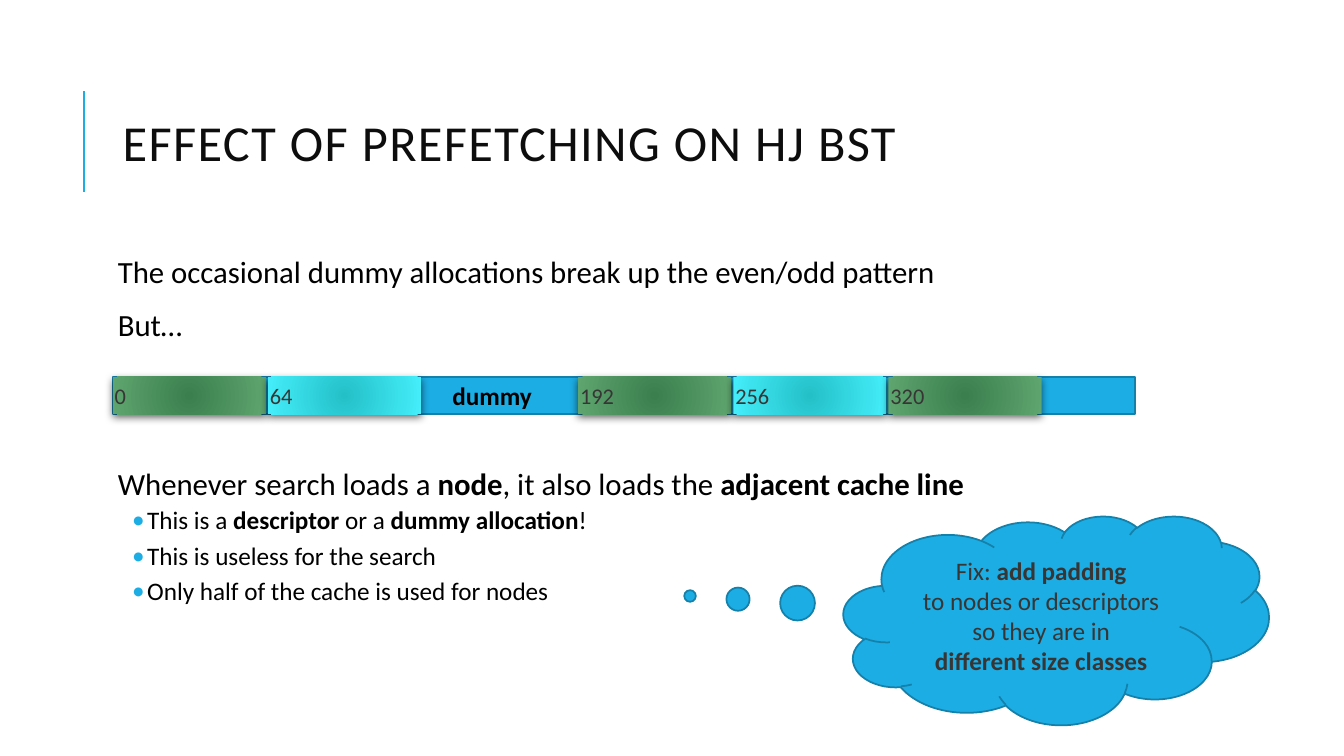
from pptx import Presentation
from pptx.dml.color import RGBColor
from pptx.enum.shapes import MSO_CONNECTOR, MSO_SHAPE
from pptx.enum.text import MSO_ANCHOR, PP_ALIGN
from pptx.oxml import parse_xml
from pptx.oxml.ns import nsdecls, qn
from pptx.util import Cm, Pt

COLORS = {
    "background": "FFFFFF", "title": "0D0D0D", "body": "000000",
    "label": "383635", "accent": "1CADE4", "outline": "1580A9",
    "shadow": "000000",
}
NODE, DESCRIPTOR = ("3A7F4D", "5FA56F"), ("24C0C8", "44EEFA")

TITLE = [("EFFECT OF PREFETCHING ON HJ BST", False)]
POINTS = [
    (0, 12, [("The occasional dummy allocations break up the even/odd pattern", False)]),
    (0, 12, [("But…", False)]),
    (0, 87.7, [("Whenever search loads a ", False), ("node", True),
               (", it also loads the ", False), ("adjacent cache line", True)]),
    (1, 2, [("This is a ", False), ("descriptor ", True), ("or a ", False),
            ("dummy allocation", True), ("!", False)]),
    (1, 2, [("This is useless for the search", False)]),
    (1, 2, [("Only half of the cache is used for nodes", False)]),
]
LEVELS = [
    {"size": 22, "after": 2, "margin": 0.25, "hang": 0.25, "bullet": False},
    {"size": 18, "after": 4, "margin": 0.74, "hang": 0.38, "bullet": True},
]
ALLOCATIONS = [(0, NODE), (64, DESCRIPTOR), (192, NODE), (256, DESCRIPTOR), (320, NODE)]
DUMMY = [("dummy", True)]
FIX = [
    [("Fix: ", False), ("add padding", True)],
    [("to nodes or descriptors", False)],
    [("so they are in", False), ("\n", False), ("different size classes", True)],
]

LEFT, CONTENT_WIDTH = 2.84, 27
MEMORY_TOP, MEMORY_HEIGHT, MEMORY_WIDTH = 9.5, 0.94, 25.76
LINE_BYTES, LINE_PITCH, LINE_WIDTH = 64, 3.91, 3.86


def rgb(name):
    return RGBColor.from_string(COLORS[name])


def add_runs(paragraph, pieces, size, color):
    for text, bold in pieces:
        if text == "\n":
            paragraph.add_line_break()
            continue
        run = paragraph.add_run()
        run.text = text
        run.font.name, run.font.size, run.font.bold = "Calibri", Pt(size), bold
        run.font.color.rgb = rgb(color)


def add_text(slide, left, top, width, height):
    frame = slide.shapes.add_textbox(Cm(left), Cm(top), Cm(width), Cm(height)).text_frame
    frame.word_wrap = True
    return frame


def add_filled(slide, kind, left, top, width, height):
    shape = slide.shapes.add_shape(kind, Cm(left), Cm(top), Cm(width), Cm(height))
    shape.shadow.inherit = False
    shape.fill.solid()
    shape.fill.fore_color.rgb = rgb("accent")
    shape.line.color.rgb = rgb("outline")
    shape.line.width = Pt(1.25)
    return shape


def add_title(slide):
    rule = slide.shapes.add_connector(
        MSO_CONNECTOR.STRAIGHT, Cm(2.11), Cm(4.83), Cm(2.11), Cm(2.29))
    rule.line.color.rgb = rgb("accent")
    rule.line.width = Pt(1.5)
    rule._element.spPr.append(parse_xml(f"<a:effectLst {nsdecls('a')}/>"))
    frame = add_text(slide, LEFT, 1.63, CONTENT_WIDTH, 4.17)
    frame.vertical_anchor = MSO_ANCHOR.MIDDLE
    heading = frame.paragraphs[0]
    heading.line_spacing = 0.8
    add_runs(heading, TITLE, 36, "title")
    heading.runs[0].font._element.set("spc", "100")


def add_points(slide):
    frame = add_text(slide, LEFT, 6.35, CONTENT_WIDTH, 11.18)
    frame.margin_left = frame.margin_right = Cm(0.13)
    frame.margin_top = frame.margin_bottom = Cm(0.13)
    for index, (depth, before, pieces) in enumerate(POINTS):
        point = frame.add_paragraph() if index else frame.paragraphs[0]
        level = LEVELS[depth]
        point.level = depth
        point.line_spacing = 0.9
        point.space_before, point.space_after = Pt(before), Pt(level["after"])
        properties = point._p.get_or_add_pPr()
        properties.set("marL", str(Cm(level["margin"])))
        properties.set("indent", str(-Cm(level["hang"])))
        if level["bullet"]:
            properties.append(parse_xml(
                f'<a:buClr {nsdecls("a")}><a:srgbClr val="{COLORS["accent"]}"/></a:buClr>'))
            properties.append(parse_xml(f'<a:buFont {nsdecls("a")} typeface="Calibri"/>'))
            properties.append(parse_xml(f'<a:buChar {nsdecls("a")} char="•"/>'))
        else:
            properties.append(parse_xml(f"<a:buNone {nsdecls('a')}/>"))
        add_runs(point, pieces, level["size"], "body")


def add_allocation(slide, address, gradient):
    left = LEFT + address / LINE_BYTES * LINE_PITCH
    block = add_filled(slide, MSO_SHAPE.RECTANGLE, left, MEMORY_TOP, LINE_WIDTH, MEMORY_HEIGHT)
    block.fill.background()
    block.line.fill.background()
    center, edge = gradient
    properties = block._element.spPr
    properties.replace(properties.find(qn("a:noFill")), parse_xml(
        f'<a:gradFill {nsdecls("a")} rotWithShape="1"><a:gsLst>'
        f'<a:gs pos="0"><a:srgbClr val="{center}"/></a:gs>'
        f'<a:gs pos="100000"><a:srgbClr val="{edge}"/></a:gs></a:gsLst>'
        '<a:path path="circle"><a:fillToRect l="100000" t="100000" r="100000" b="100000"/>'
        '</a:path></a:gradFill>'))
    properties.find(qn("a:effectLst")).append(parse_xml(
        f'<a:outerShdw {nsdecls("a")} blurRad="{Pt(6)}" dist="{Pt(2)}" dir="5400000" '
        f'rotWithShape="0"><a:srgbClr val="{COLORS["shadow"]}"><a:alpha val="60000"/>'
        '</a:srgbClr></a:outerShdw>'))
    frame = block.text_frame
    frame.margin_left = Cm(0.05)
    frame.vertical_anchor = MSO_ANCHOR.MIDDLE
    frame.paragraphs[0].alignment = PP_ALIGN.LEFT
    add_runs(frame.paragraphs[0], [(str(address), False)], 16, "label")


def add_memory(slide):
    add_filled(slide, MSO_SHAPE.RECTANGLE, LEFT, MEMORY_TOP, MEMORY_WIDTH, MEMORY_HEIGHT)
    for address, gradient in ALLOCATIONS:
        add_allocation(slide, address, gradient)
    frame = add_text(slide, 11.15, 9.45, 2.84, 1.02)
    add_runs(frame.paragraphs[0], DUMMY, 18, "body")


def add_fix(slide):
    cloud = add_filled(slide, MSO_SHAPE.CLOUD_CALLOUT, 21.26, 13, 10.72, 5.26)
    cloud.adjustments[0], cloud.adjustments[1] = -0.861, -0.116
    frame = cloud.text_frame
    frame.word_wrap = False
    frame.vertical_anchor = MSO_ANCHOR.MIDDLE
    for index, pieces in enumerate(FIX):
        advice = frame.add_paragraph() if index else frame.paragraphs[0]
        advice.alignment = PP_ALIGN.CENTER
        add_runs(advice, pieces, 18, "label")


def main():
    """Build the slide on how prefetching affects the HJ BST."""
    deck = Presentation()
    deck.slide_width, deck.slide_height = Cm(33.87), Cm(19.05)
    slide = deck.slides.add_slide(deck.slide_layouts[6])
    slide.background.fill.solid()
    slide.background.fill.fore_color.rgb = rgb("background")
    add_title(slide)
    add_points(slide)
    add_memory(slide)
    add_fix(slide)
    deck.save("out.pptx")


if __name__ == "__main__":
    main()
